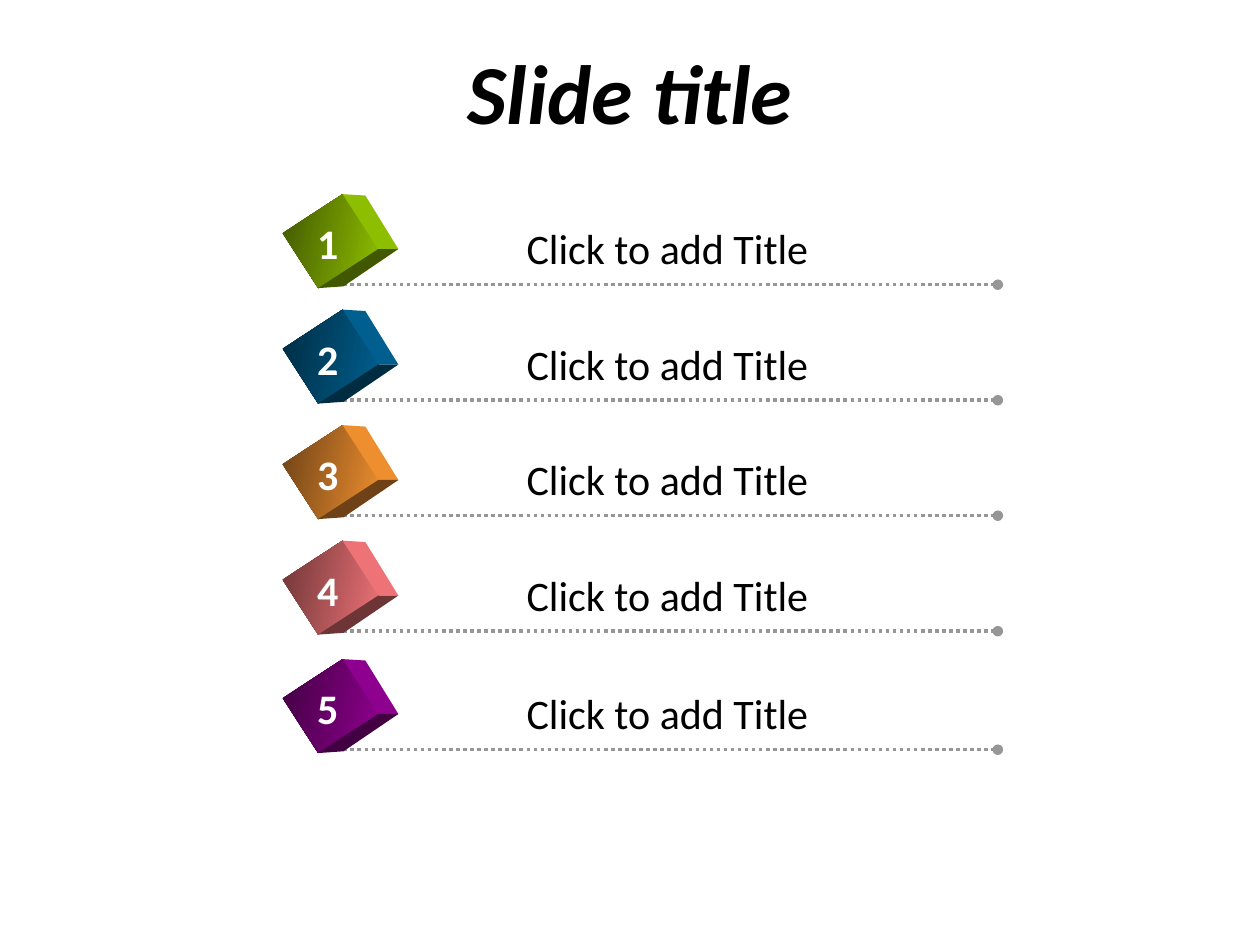
import math
from dataclasses import dataclass

from lxml import etree
from pptx import Presentation
from pptx.dml.color import RGBColor
from pptx.enum import dml, shapes, text
from pptx.oxml.ns import qn
from pptx.util import Pt

# Content: number, label, cube colour, height of the dotted rule
TITLE = "Slide title"
ROWS = [
    ("1", "Click to add Title", "99CC00", 162.7),
    ("2", "Click to add Title", "006699", 228.7),
    ("3", "Click to add Title", "FF9933", 294.7),
    ("4", "Click to add Title", "FF7C80", 360.7),
    ("5", "Click to add Title", "990099", 428.4),
]


@dataclass(frozen=True)
class Theme:
    font: str = "Calibri"
    ink: str = "000000"
    number: str = "FFFFFF"
    rule: str = "969696"
    title_size: int = 48
    row_size: int = 24
    lit: float = 0.93
    dark: float = 0.43


THEME = Theme()

# Layout in points; heights are relative to each rule
RULE_X = (192.2, 570.2)
CUBE_CENTRE = (188.8, -24.9)
CUBE_W, CUBE_H, CUBE_TURN = 37.4, 41, 57
SIDE_DEPTH = [(13, 0.8), (11.5, 0), (14.5, -1)]  # top, right, bottom corners
LABEL_BOX = (293.8, -38.9, 192.2, 36)
NUMBER_BOX = (174.2, -41.8, 28.1, 36)


def shade(colour, factor):
    rgb = RGBColor.from_string(colour)
    return RGBColor(*(round(c * factor) for c in rgb))


def add_run(p, words, size, colour, bold=False, italic=False):
    r = p.add_run()
    r.text = words
    r.font.name, r.font.size = THEME.font, Pt(size)
    r.font.bold, r.font.italic = bold, italic
    r.font.color.rgb = RGBColor.from_string(colour)


def add_text(group, box, y, words, colour, bold=False):
    left, top, width, height = box
    sp = group.shapes.add_textbox(Pt(left), Pt(y + top), Pt(width), Pt(height))
    tf = sp.text_frame
    tf.word_wrap = False
    tf.auto_size = text.MSO_AUTO_SIZE.SHAPE_TO_FIT_TEXT
    add_run(tf.paragraphs[0], words, THEME.row_size, colour, bold)


def add_rule(group, y):
    line = group.shapes.add_connector(
        shapes.MSO_CONNECTOR.STRAIGHT, Pt(RULE_X[0]), Pt(y), Pt(RULE_X[1]), Pt(y))
    line.line.color.rgb = RGBColor.from_string(THEME.rule)
    line.line.width = Pt(2)
    line.line.dash_style = dml.MSO_LINE.ROUND_DOT
    etree.SubElement(line.line._get_or_add_ln(), qn("a:tailEnd"), type="oval")
    etree.SubElement(line._element.spPr, qn("a:effectLst"))


def add_face(group, points, colour):
    corners = [(Pt(x), Pt(y)) for x, y in points]
    builder = group.shapes.build_freeform(*corners[0], scale=1.0)
    builder.add_line_segments(corners[1:], close=True)
    sp = builder.convert_to_shape()
    sp.shadow.inherit = False
    sp.fill.solid()
    sp.fill.fore_color.rgb = colour
    sp.line.fill.background()


def add_cube(group, y, colour):
    cx, cy = CUBE_CENTRE[0], y + CUBE_CENTRE[1]
    lit, dark = shade(colour, THEME.lit), shade(colour, THEME.dark)

    # Turned front face
    sp = group.shapes.add_shape(
        shapes.MSO_SHAPE.RECTANGLE, Pt(cx - CUBE_W / 2), Pt(cy - CUBE_H / 2),
        Pt(CUBE_W), Pt(CUBE_H))
    sp.rotation = CUBE_TURN
    sp.shadow.inherit = False
    sp.line.fill.background()
    sp.fill.gradient()
    sp.fill.gradient_angle = 45
    for stop, rgb in zip(sp.fill.gradient_stops, (dark, lit)):
        stop.color.rgb = rgb

    # Two side faces, from the front corners that the depth starts at
    cos, sin = (f(math.radians(CUBE_TURN)) for f in (math.cos, math.sin))
    front = []
    for sx, sy in ((-1, -1), (1, -1), (1, 1)):
        dx, dy = sx * CUBE_W / 2, sy * CUBE_H / 2
        front.append((cx + dx * cos - dy * sin, cy + dx * sin + dy * cos))
    back = [(x + dx, y + dy) for (x, y), (dx, dy) in zip(front, SIDE_DEPTH)]
    for i, rgb in enumerate((lit, dark)):
        add_face(group, [front[i], back[i], back[i + 1], front[i + 1]], rgb)


def main():
    prs = Presentation()
    prs.slide_width, prs.slide_height = Pt(720), Pt(540)
    s = prs.slides.add_slide(prs.slide_layouts[5])

    # Title
    title = s.shapes.title
    title.left, title.top, title.width, title.height = map(Pt, (49.7, 20.2, 620.6, 70.6))
    title.text_frame.vertical_anchor = text.MSO_ANCHOR.MIDDLE
    p = title.text_frame.paragraphs[0]
    p.alignment = text.PP_ALIGN.CENTER
    p.line_spacing = 0.9
    add_run(p, TITLE, THEME.title_size, THEME.ink, bold=True, italic=True)

    # Numbered rows
    for number, label, colour, y in ROWS:
        group = s.shapes.add_group_shape()
        add_rule(group, y)
        add_cube(group, y, colour)
        add_text(group, LABEL_BOX, y, label, THEME.ink)
        add_text(group, NUMBER_BOX, y, number, THEME.number, bold=True)

    prs.save("out.pptx")


if __name__ == "__main__":
    main()
